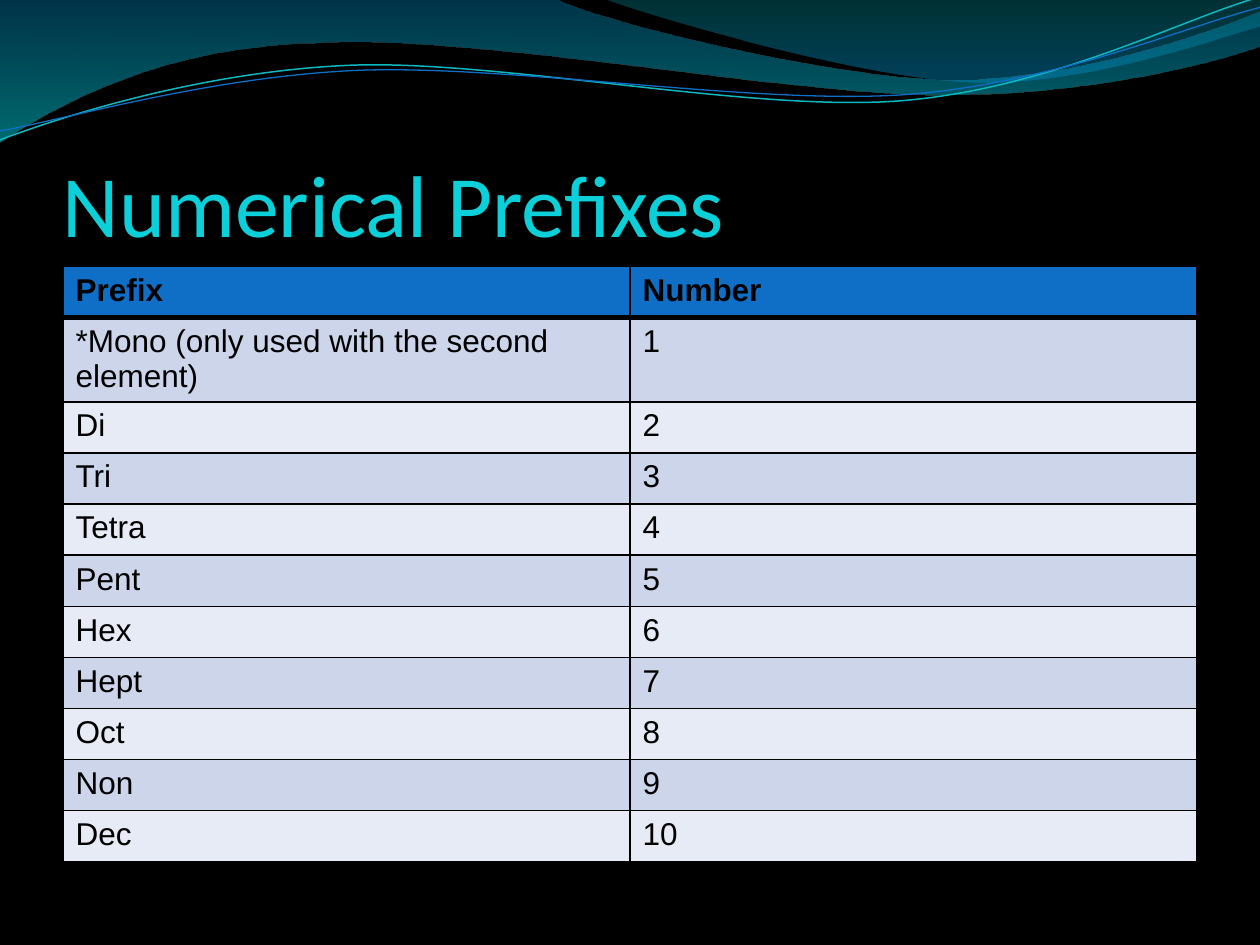
from lxml import etree
from pptx import Presentation
from pptx.dml.color import RGBColor
from pptx.enum.text import MSO_ANCHOR
from pptx.oxml.ns import qn
from pptx.util import Cm, Pt

BOTTOM = MSO_ANCHOR.BOTTOM
COLORS = {
    "black": "000000", "title": "0BD0D9", "header": "0F6FC6",
    "odd": "CCD5EA", "even": "E7EBF5", "cyan": "0AB8BF",
    "band_top": "0074A1", "band_end": "00C6CF",
    "wave_top": "00A1A9", "wave_end": "008BBF",
}
RGB = {name: RGBColor.from_string(code) for name, code in COLORS.items()}


def add_curve(s, start, segments, close):
    """Draw a freeform in cm; a segment is one line point or three Bezier points."""
    builder = s.shapes.build_freeform(Cm(start[0]), Cm(start[1]))
    builder.add_line_segments([(Cm(x), Cm(y)) for seg in segments for x, y in seg], close=close)
    sp = builder.convert_to_shape()
    sp.shadow.inherit = False
    lines = iter(list(sp.element.spPr.iter(qn("a:lnTo"))))
    for seg in segments:
        group = [next(lines) for _ in seg]
        if len(group) == 3:
            curve = etree.Element(qn("a:cubicBezTo"))
            group[0].addprevious(curve)
            for line in group:
                curve.append(line[0])
                line.getparent().remove(line)
    return sp


def set_font(r, fmt):
    r.font.color.rgb = fmt["color"]
    for key in ("name", "size", "bold"):
        setattr(r.font, key, fmt[key])


prs = Presentation()
prs.slide_width, prs.slide_height = Cm(25.4), Cm(19.05)
s = prs.slides.add_slide(prs.slide_layouts[6])
s.background.fill.solid()
s.background.fill.fore_color.rgb = RGB["black"]

# Translucent waves: start, segments, (colour, position, alpha %) stops
waves = [
    ((0, -0.03), [
        [(11.18, -0.03)],
        [(12.09, 0.43), (16.87, 1.6), (19.25, 1.6)],
        [(21.67, 1.6), (24.33, 0.66), (25.4, 0.23)],
        [(25.43, 0.91)],
        [(24.97, 1.12), (22.1, 1.93), (18.95, 1.91)],
        [(15.8, 1.91), (9.7, 0.71), (6.53, 0.86)],
        [(3.28, 0.89), (1.17, 2.11), (-0.03, 2.87)],
        [(0, -0.03)],
    ], [("band_top", 0, 45), ("band_end", 1, 55)]),
    ((12.17, -0.03), [
        [(12.93, 0.28), (17.32, 1.57), (19.53, 1.65)],
        [(21.74, 1.75), (24.41, 0.81), (25.4, 0.53)],
        [(25.4, 0)],
        [(12.17, -0.03)],
    ], [("wave_top", 0, 30), ("wave_end", 0.8, 45)]),
]
for start, segments, stops in waves:
    sp = add_curve(s, start, segments, True)
    sp.line.fill.background()
    sp.fill.gradient()
    sp.fill.gradient_angle = 270
    for stop, (color, position, _) in zip(sp.fill.gradient_stops, stops):
        stop.color.rgb = RGB[color]
        stop.position = position
    for clr, (_, _, alpha) in zip(sp.element.spPr.iter(qn("a:srgbClr")), stops):
        etree.SubElement(clr, qn("a:alpha"), val=str(alpha * 1000))

# Thin wave lines, tilted slightly
wave_lines = [
    ((-0.05, 2.22), [
        [(1.19, 1.82), (4.02, 1.04), (7.05, 1.05)],
        [(10.05, 1.07), (15.02, 2.37), (18.08, 2.29)],
        [(21.13, 2.2), (23.87, 0.91), (25.41, 0.55)],
    ], "cyan", 0.85),
    ((-0.04, 2.04), [
        [(1.16, 1.9), (4.18, 1.15), (7.2, 1.16)],
        [(10.25, 1.18), (15.13, 2.23), (18.18, 2.17)],
        [(21.21, 2.1), (23.93, 1.06), (25.45, 0.75)],
    ], "header", 0.75),
]
for start, segments, color, width in wave_lines:
    sp = add_curve(s, start, segments, False)
    sp.rotation = 357.3
    sp.fill.background()
    sp.line.color.rgb = RGB[color]
    sp.line.width = Pt(width)

# Title
tf = s.shapes.add_textbox(Cm(1.27), Cm(1.96), Cm(22.86), Cm(3.18)).text_frame
frame = {"word_wrap": True, "vertical_anchor": BOTTOM, "margin_left": 0,
         "margin_top": Cm(0.13), "margin_right": 0, "margin_bottom": 0}
for key, value in frame.items():
    setattr(tf, key, value)
r = tf.paragraphs[0].add_run()
r.text = "Numerical Prefixes"
set_font(r, {"name": "Calibri", "size": Pt(50), "bold": False, "color": RGB["title"]})

# Prefix table
prefixes = ["*Mono (only used with the second element)", "Di", "Tri", "Tetra", "Pent",
            "Hex", "Hept", "Oct", "Non", "Dec"]
rows = [("Prefix", "Number")] + [(name, str(n)) for n, name in enumerate(prefixes, 1)]
row_height = Cm(1.03)
table = s.shapes.add_table(len(rows), 2, Cm(1.27), Cm(5.37), Cm(22.86),
                           row_height * len(rows)).table
for i, row in enumerate(rows):
    table.rows[i].height = row_height
    fill = "header" if i == 0 else "odd" if i % 2 else "even"
    borders = {"a:lnL": 1, "a:lnR": 1, "a:lnT": 3 if i == 1 else 1, "a:lnB": 3 if i == 0 else 1}
    for j, text in enumerate(row):
        cell = table.cell(i, j)
        if i == 1:
            cell.margin_bottom = Cm(0.05)  # offsets the thick rule above
        cell.fill.solid()
        cell.fill.fore_color.rgb = RGB[fill]
        r = cell.text_frame.paragraphs[0].add_run()
        r.text = text
        set_font(r, {"name": "Arial", "size": Pt(18), "bold": i == 0, "color": RGB["black"]})
        tcPr = cell._tc.get_or_add_tcPr()
        for k, (tag, width) in enumerate(borders.items()):
            ln = etree.Element(qn(tag), w=str(Pt(width)))
            solid = etree.SubElement(ln, qn("a:solidFill"))
            etree.SubElement(solid, qn("a:srgbClr"), val=COLORS["black"])
            tcPr.insert(k, ln)

prs.save("out.pptx")
